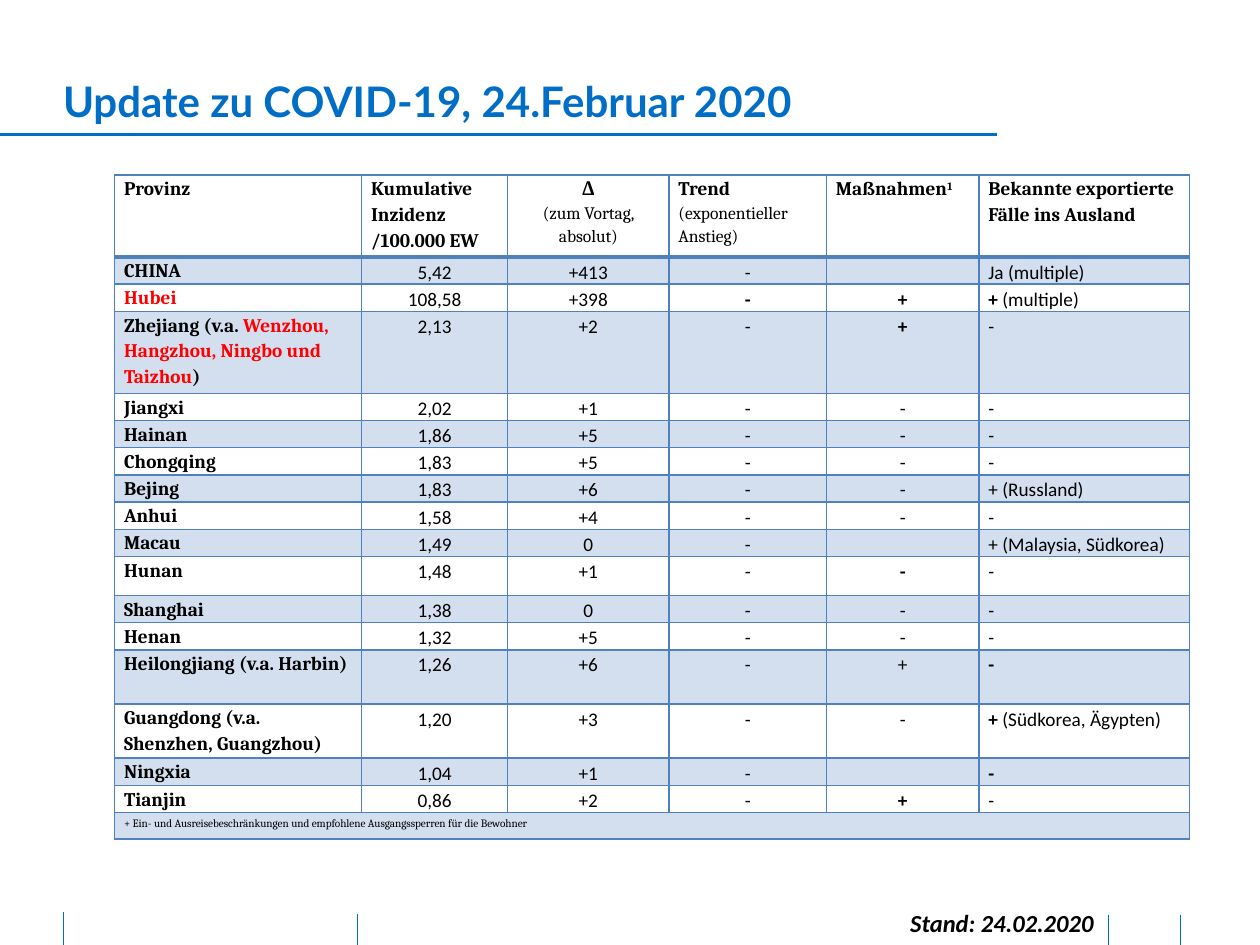
import pptx
import pptx.dml.color
import pptx.enum.shapes
import pptx.enum.text
import pptx.oxml
import pptx.oxml.ns
import pptx.util
from lxml import etree

ALIGN = pptx.enum.text.PP_ALIGN
ANCHOR = pptx.enum.text.MSO_ANCHOR
qn = pptx.oxml.ns.qn


def rgb(value):
    return pptx.dml.color.RGBColor.from_string(value)


class Deck:
    """Style and current slide; lengths are cells of a 100 x 75 grid."""
    BLUE, BLACK, RED = "006EC7", "000000", "FF0000"
    BORDER, BAND = "4F81BD", "D3DFEE"

    def __init__(self):
        self.prs = pptx.Presentation()
        self.prs.slide_width = pptx.util.Inches(10)
        self.prs.slide_height = pptx.util.Inches(7.5)
        self.unit = self.prs.slide_width / 100
        self.s = self.prs.slides.add_slide(self.prs.slide_layouts[5])

    def grid(self, *cells):
        return [pptx.util.Emu(round(c * self.unit)) for c in cells]

    def font(self, font, name, size, color, bold=True, italic=False):
        font.name, font.size = name, pptx.util.Pt(size)
        font.bold, font.italic = bold, italic
        font.color.rgb = rgb(color)

    def title(self, text, *box):
        sp = self.s.shapes.title
        sp.left, sp.top, sp.width, sp.height = self.grid(*box)
        tf = sp.text_frame
        tf.margin_left = tf.margin_right = tf.margin_top = tf.margin_bottom = 0
        tf.vertical_anchor = ANCHOR.MIDDLE
        tf.text = text
        p = tf.paragraphs[0]
        p.alignment = ALIGN.LEFT
        self.font(p.font, "Lato", 24, self.BLUE)

    def label(self, text, *box):
        tf = self.s.shapes.add_textbox(*self.grid(*box)).text_frame
        tf.word_wrap = True
        tf.text = text
        p = tf.paragraphs[0]
        p.alignment = ALIGN.RIGHT
        self.font(p.font, "Calibri", 14, self.BLACK, italic=True)

    def line(self, x1, y1, x2, y2, width):
        kind = pptx.enum.shapes.MSO_CONNECTOR.STRAIGHT
        sp = self.s.shapes.add_connector(kind, *self.grid(x1, y1, x2, y2))
        sp.line.color.rgb = rgb(self.BLUE)
        sp.line.width = pptx.util.Pt(width)
        etree.SubElement(sp._element.spPr, qn("a:effectLst"))

    def borders(self, cell, top, bottom):
        tcPr = cell._tc.get_or_add_tcPr()
        widths = {"lnL": 1, "lnR": 1, "lnT": top, "lnB": bottom}
        for i, (tag, width) in enumerate(widths.items()):
            ln = etree.Element(qn("a:" + tag), w=str(pptx.util.Pt(width)))
            fill = etree.SubElement(ln, qn("a:solidFill"))
            etree.SubElement(fill, qn("a:srgbClr"), val=self.BORDER)
            tcPr.insert(i, ln)

    def cell_text(self, cell, text, name, bold, alignment):
        """Marks at the start of a run: * bold, ! red, ~ small plain, ^ raised."""
        tf = cell.text_frame
        for i, row in enumerate(text.split("\n")):
            p = tf.paragraphs[0] if i == 0 else tf.add_paragraph()
            p.alignment, p.line_spacing = alignment, 1.15
            self.font(p.font, name, 11, self.BLACK, bold)
            if not row:
                etree.SubElement(p._p, qn("a:endParaRPr"), sz="1100")
                continue
            for part in row.split("|"):
                r = p.add_run()
                r.text = part.lstrip("*!~^")
                if part[0] == "*":
                    r.font.bold = True
                elif part[0] == "!":
                    r.font.color.rgb = rgb(self.RED)
                elif part[0] == "~":
                    r.font.size, r.font.bold = pptx.util.Pt(10), False
                elif part[0] == "^":
                    r._r.get_or_add_rPr().set("baseline", "30000")

    def table(self, rows, left, top, widths, heights):
        box = self.grid(left, top, sum(widths), sum(heights))
        table = self.s.shapes.add_table(len(rows), len(widths), *box).table
        table.first_row = table.horz_banding = False
        for column, width in zip(table.columns, self.grid(*widths)):
            column.width = width
        for row, height in zip(table.rows, self.grid(*heights)):
            row.height = height
        last = len(rows) - 1
        for i, row in enumerate(rows):
            for j in range(len(widths)):
                cell = table.cell(i, j)
                cell.margin_left, cell.margin_right = self.grid(0.75, 0.75)
                cell.margin_top = cell.margin_bottom = 0
                if i % 2:
                    cell.fill.solid()
                    cell.fill.fore_color.rgb = rgb(self.BAND)
                else:
                    cell.fill.background()
                self.borders(cell, 2.25 if i == 1 else 1, 2.25 if i == 0 else 1)
                head = i == 0 or j == 0
                centred = j == 2 or (i > 0 and 0 < j < 5)
                self.cell_text(cell, row[j] if j < len(row) else "",
                               "Cambria" if head else "Calibri",
                               head and i < last,
                               ALIGN.CENTER if centred else ALIGN.LEFT)
        table.cell(last, 0).merge(table.cell(last, len(widths) - 1))


ROWS = [
    ["Provinz", "Kumulative Inzidenz /100.000 EW", "Δ\n~(zum Vortag, absolut)",
     "Trend\n~(exponentieller Anstieg)", "Maßnahmen|^1",
     "Bekannte exportierte Fälle ins Ausland"],
    ["CHINA", "5,42", "+413", "-", "", "Ja (multiple)"],
    ["!Hubei", "108,58", "+398", "*-", "*+", "*+| (multiple)"],
    ["Zhejiang (v.a. |!Wenzhou, Hangzhou, Ningbo und Taizhou|)",
     "2,13", "+2", "-", "*+", "-"],
    ["Jiangxi", "2,02", "+1", "-", "-", "-"],
    ["Hainan", "1,86", "+5", "-", "-", "-"],
    ["Chongqing", "1,83", "+5", "-", "-", "-"],
    ["Bejing", "1,83", "+6", "-", "-", "+ (Russland)"],
    ["Anhui", "1,58", "+4", "-", "-", "-"],
    ["Macau", "1,49", "0", "-", "", "+ (Malaysia, Südkorea)"],
    ["Hunan", "1,48", "+1", "-", "*-", "-"],
    ["Shanghai", "1,38", "0", "-", "-", "-"],
    ["Henan", "1,32", "+5", "-", "-", "-"],
    ["Heilongjiang (v.a. Harbin)", "1,26", "+6", "-", "+", "*-"],
    ["Guangdong (v.a. Shenzhen, Guangzhou)", "1,20", "+3", "-", "-",
     "*+| (Südkorea, Ägypten)"],
    ["Ningxia", "1,04", "+1", "-", "", "*-"],
    ["Tianjin", "0,86", "+2", "-", "*+", "-"],
    ["^+ Ein- und Ausreisebeschränkungen und empfohlene Ausgangssperren "
     "für die Bewohner"],
]
WIDTHS = [19.6, 11.6, 12.8, 12.5, 12.1, 16.7]
TALL_ROWS = {0: 6.5, 3: 6.5, 10: 3.1, 13: 4.3, 14: 4.3, 17: 2.1}


def main():
    deck = Deck()
    # Footer ticks
    for x, y in [(28.4, 72.5), (5, 72.4), (93.7, 72.6), (88, 72.6)]:
        deck.line(x, y, x, 75, 0.5)
    # Title and rule
    deck.title("Update zu COVID-19, 24.Februar 2020", 5, 6, 88.5, 4)
    deck.line(0, 10.7, 79.1, 10.7, 1.5)
    # Date
    deck.label("Stand: 24.02.2020", 66.5, 71.6, 21.3, 3.4)
    # Province table
    heights = [TALL_ROWS.get(i, 2.16) for i in range(len(ROWS))]
    deck.table(ROWS, 9.1, 13.9, WIDTHS, heights)
    deck.prs.save("out.pptx")


if __name__ == "__main__":
    main()
